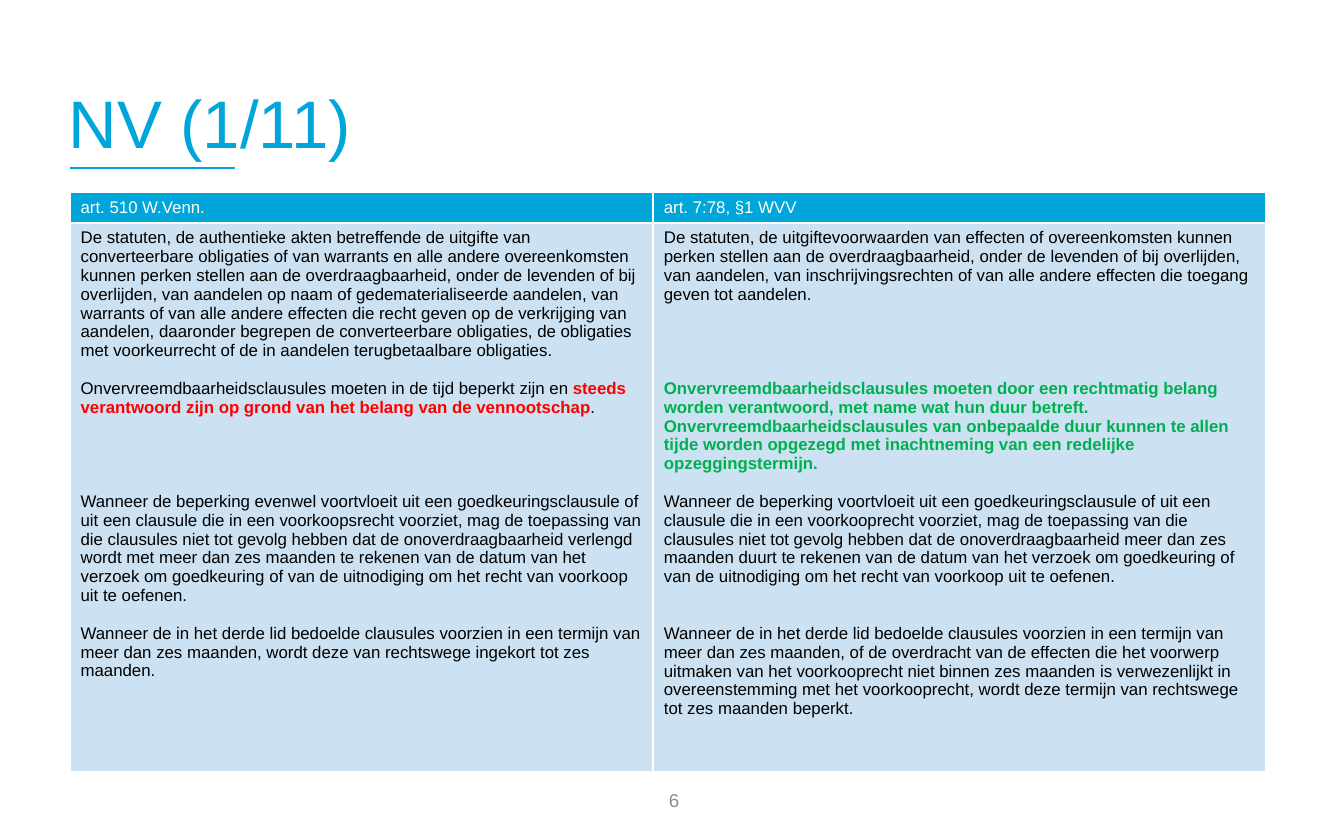
import pptx
import pptx.dml.color
import pptx.enum.shapes
import pptx.enum.text
import pptx.oxml
import pptx.oxml.ns
import pptx.util

BLUE = pptx.dml.color.RGBColor(0x00, 0xA5, 0xD9)
PALE = pptx.dml.color.RGBColor(0xCC, 0xE1, 0xF1)
WHITE = pptx.dml.color.RGBColor(0xFF, 0xFF, 0xFF)
BLACK = pptx.dml.color.RGBColor(0x00, 0x00, 0x00)
RED = pptx.dml.color.RGBColor(0xFF, 0x00, 0x00)
GREEN = pptx.dml.color.RGBColor(0x00, 0xB0, 0x50)
GRAY = pptx.dml.color.RGBColor(0x8C, 0x8C, 0x8C)

WIDTH = pptx.util.Inches(10)
HEIGHT = pptx.util.Inches(6.25)
UNIT = WIDTH / 100
LINE_PITCH = 10.1

ANCHOR = pptx.enum.text.MSO_ANCHOR
ALIGN = pptx.enum.text.PP_ALIGN

HEADINGS = ["art. 510 W.Venn.", "art. 7:78, §1 WVV"]
OLD_ARTICLE = [
    (0, [("De statuten, de authentieke akten betreffende de uitgifte van converteerbare obligaties of van warrants en alle andere overeenkomsten kunnen perken stellen aan de overdraagbaarheid, onder de levenden of bij overlijden, van aandelen op naam of gedematerialiseerde aandelen, van warrants of van alle andere effecten die recht geven op de verkrijging van aandelen, daaronder begrepen de converteerbare obligaties, de obligaties met voorkeurrecht of de in aandelen terugbetaalbare obligaties.", BLACK)]),
    (1, [("Onvervreemdbaarheidsclausules moeten in de tijd beperkt zijn en ", BLACK),
         ("steeds verantwoord zijn op grond van het belang van de vennootschap", RED),
         (".", BLACK)]),
    (4, [("Wanneer de beperking evenwel voortvloeit uit een goedkeuringsclausule of uit een clausule die in een voorkoopsrecht voorziet, mag de toepassing van die clausules niet tot gevolg hebben dat de onoverdraagbaarheid verlengd wordt met meer dan zes maanden te rekenen van de datum van het verzoek om goedkeuring of van de uitnodiging om het recht van voorkoop uit te oefenen.", BLACK)]),
    (1, [("Wanneer de in het derde lid bedoelde clausules voorzien in een termijn van meer dan zes maanden, wordt deze van rechtswege ingekort tot zes maanden.", BLACK)]),
]
NEW_ARTICLE = [
    (0, [("De statuten, de uitgiftevoorwaarden van effecten of overeenkomsten kunnen perken stellen aan de overdraagbaarheid, onder de levenden of bij overlijden, van aandelen, van inschrijvingsrechten of van alle andere effecten die toegang geven tot aandelen.", BLACK)]),
    (4, [("Onvervreemdbaarheidsclausules moeten door een rechtmatig belang worden verantwoord, met name wat hun duur betreft. Onvervreemdbaarheidsclausules van onbepaalde duur kunnen te allen tijde worden opgezegd met inachtneming van een redelijke opzeggingstermijn.", GREEN)]),
    (1, [("Wanneer de beperking voortvloeit uit een goedkeuringsclausule of uit een clausule die in een voorkooprecht voorziet, mag de toepassing van die clausules niet tot gevolg hebben dat de onoverdraagbaarheid meer dan zes maanden duurt te rekenen van de datum van het verzoek om goedkeuring of van de uitnodiging om het recht van voorkoop uit te oefenen.", BLACK)]),
    (2, [("Wanneer de in het derde lid bedoelde clausules voorzien in een termijn van meer dan zes maanden, of de overdracht van de effecten die het voorwerp uitmaken van het voorkooprecht niet binnen zes maanden is verwezenlijkt in overeenstemming met het voorkooprecht, wordt deze termijn van rechtswege tot zes maanden beperkt.", BLACK)]),
]


def grid(*counts):
    return [round(count * UNIT) for count in counts]


def apply(target, values):
    for name, value in values.items():
        setattr(target, name, value)


def add_span(para, text, size, color, bold=False):
    span = para.add_run()
    span.text = text
    apply(span.font, {"name": "Arial", "size": pptx.util.Pt(size), "bold": bold})
    span.font.color.rgb = color


def place_title(page, box, text):
    title = page.shapes.title
    apply(title, dict(zip(("left", "top", "width", "height"), grid(*box))))
    inset = pptx.util.Inches(0.05)
    apply(title.text_frame, {
        "vertical_anchor": ANCHOR.BOTTOM, "word_wrap": True,
        "auto_size": pptx.enum.text.MSO_AUTO_SIZE.NONE,
        "margin_left": 0, "margin_right": 0,
        "margin_top": inset, "margin_bottom": inset,
    })
    para = title.text_frame.paragraphs[0]
    apply(para, {"alignment": ALIGN.LEFT, "line_spacing": 0.8})
    add_span(para, text, 36, BLUE)


def place_title_rule(page, box):
    left, top, width = grid(*box)
    rule = page.shapes.add_connector(
        pptx.enum.shapes.MSO_CONNECTOR.STRAIGHT, left, top, left + width, top)
    rule.line.color.rgb = BLUE
    rule.line.width = pptx.util.Pt(1.5)
    pptx.oxml.ns.qn("a:effectLst")
    rule._element.spPr.append(pptx.oxml.parse_xml(
        f'<a:effectLst {pptx.oxml.ns.nsdecls("a")}/>'))


def style_cell(cell, fill, anchor):
    apply(cell, {
        "vertical_anchor": anchor,
        "margin_left": pptx.util.Inches(0.08), "margin_right": pptx.util.Inches(0.08),
        "margin_top": pptx.util.Inches(0.04), "margin_bottom": pptx.util.Inches(0.04),
    })
    cell.fill.solid()
    cell.fill.fore_color.rgb = fill
    properties = cell._tc.get_or_add_tcPr()
    for index, side in enumerate("LRTB"):
        properties.insert(index, pptx.oxml.parse_xml(
            f'<a:ln{side} {pptx.oxml.ns.nsdecls("a")} w="{pptx.util.Pt(1)}">'
            f'<a:solidFill><a:srgbClr val="{WHITE}"/></a:solidFill></a:ln{side}>'))


def fill_cell(cell, paragraphs):
    for index, (gap_lines, spans) in enumerate(paragraphs):
        frame = cell.text_frame
        para = frame.add_paragraph() if index else frame.paragraphs[0]
        para.space_before = pptx.util.Pt(gap_lines * LINE_PITCH)
        for text, color in spans:
            add_span(para, text, 9, color, color in (RED, GREEN))


def place_comparison(page, box, columns, rows):
    table = page.shapes.add_table(len(rows), len(columns), *grid(*box)).table
    for column, width in zip(table.columns, grid(*columns)):
        column.width = width
    for row, height in zip(table.rows, grid(*rows)):
        row.height = height
    for index, article in enumerate((OLD_ARTICLE, NEW_ARTICLE)):
        heading, body = table.cell(0, index), table.cell(1, index)
        style_cell(heading, BLUE, ANCHOR.MIDDLE)
        fill_cell(heading, [(0, [(HEADINGS[index], WHITE)])])
        style_cell(body, PALE, ANCHOR.TOP)
        fill_cell(body, article)


def place_page_number(page, box, number):
    frame = page.shapes.add_textbox(*grid(*box)).text_frame
    apply(frame, {"word_wrap": True, "vertical_anchor": ANCHOR.MIDDLE})
    para = frame.paragraphs[0]
    para.alignment = ALIGN.CENTER
    add_span(para, number, 10, GRAY)


def main():
    deck = pptx.Presentation()
    apply(deck, {"slide_width": WIDTH, "slide_height": HEIGHT})
    page = deck.slides.add_slide(deck.slide_layouts.get_by_name("Title Only"))
    place_title_rule(page, (5.2, 12.5, 12.3))
    place_comparison(page, (5.2, 14.3, 89, 43.1), (43.4, 45.6), (2.3, 40.8))
    place_page_number(page, (38.5, 57.9, 23.3, 3.3), "6")
    place_title(page, (5.1, 2.1, 90, 10.4), "NV (1/11)")
    deck.save("out.pptx")


if __name__ == "__main__":
    main()
